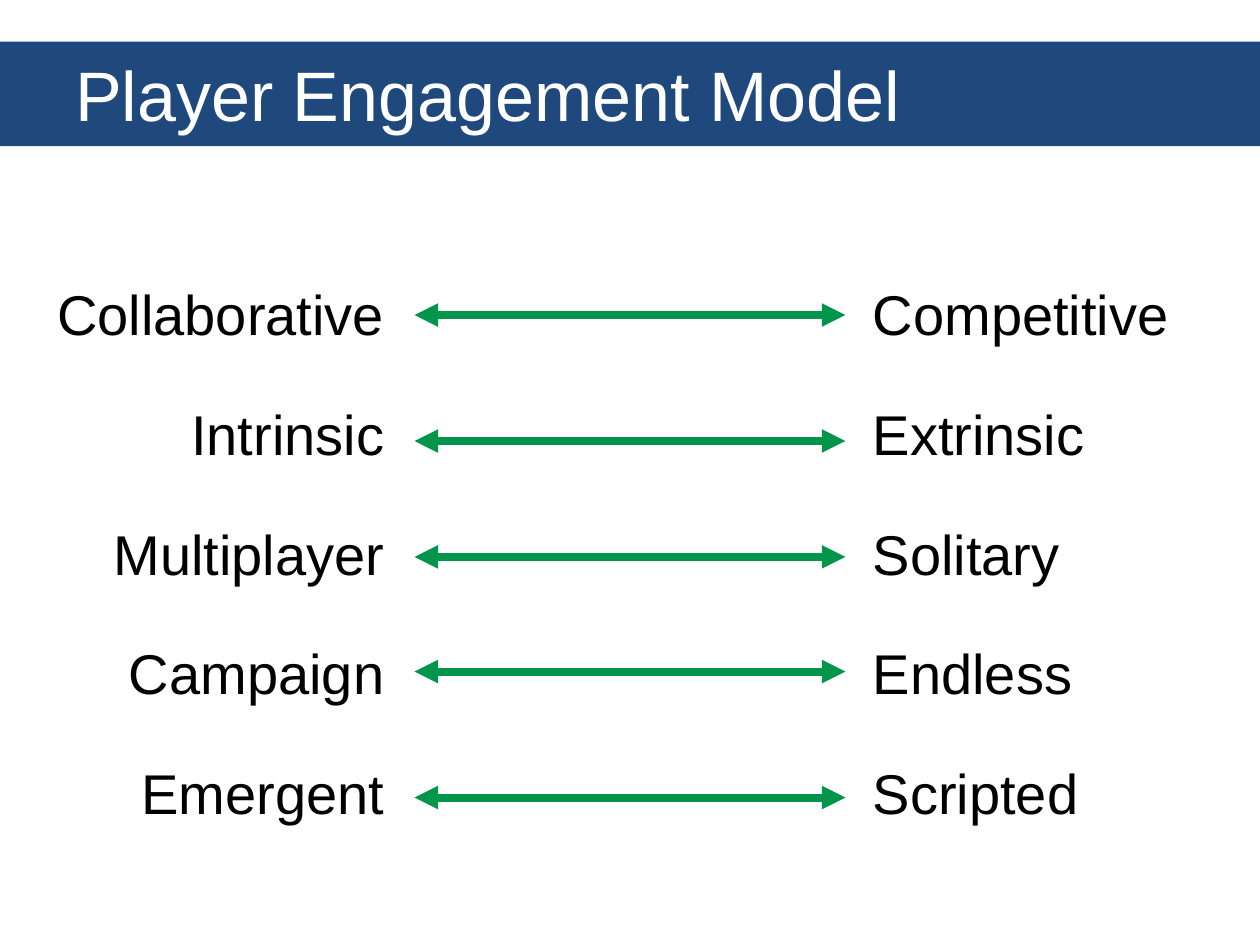
import pptx
import pptx.dml.color
import pptx.enum.shapes
import pptx.enum.text
import pptx.oxml.ns
import pptx.util
from lxml import etree
from pptx.util import Inches

NAVY = pptx.dml.color.RGBColor(0x1F, 0x49, 0x7D)
GREEN = pptx.dml.color.RGBColor(0x00, 0x95, 0x4A)
WHITE = pptx.dml.color.RGBColor(0xFF, 0xFF, 0xFF)
BLACK = pptx.dml.color.RGBColor(0x00, 0x00, 0x00)
FONT = "Arial"
ALIGN = pptx.enum.text.PP_ALIGN

OPPOSITES = [
    ("Collaborative", "Competitive"),
    ("Intrinsic", "Extrinsic"),
    ("Multiplayer", "Solitary"),
    ("Campaign", "Endless"),
    ("Emergent", "Scripted"),
]
ARROW_HEIGHTS = [2.5, 3.5, 4.42, 5.33, 6.33]


def add_span(para, text, size, color):
    span = para.add_run()
    span.text = text
    span.font.name = FONT
    span.font.size = pptx.util.Pt(size)
    span.font.color.rgb = color


def add_title_band(page, left, top, width, height):
    band = page.shapes.add_shape(
        pptx.enum.shapes.MSO_SHAPE.RECTANGLE, left, top, width, height)
    band.shadow.inherit = False
    band.fill.solid()
    band.fill.fore_color.rgb = NAVY
    band.line.fill.background()
    band.text_frame.vertical_anchor = pptx.enum.text.MSO_ANCHOR.MIDDLE
    para = band.text_frame.paragraphs[0]
    para.alignment = ALIGN.LEFT
    # Indent the title from the band's left edge
    properties = para._p.get_or_add_pPr()
    properties.set("marL", str(Inches(0.5)))
    properties.set("indent", "0")
    add_span(para, "Player Engagement Model", 40, WHITE)


def add_word_column(page, left, top, width, height, words, alignment):
    box = page.shapes.add_textbox(left, top, width, height)
    frame = box.text_frame
    frame.word_wrap = False
    frame.auto_size = pptx.enum.text.MSO_AUTO_SIZE.SHAPE_TO_FIT_TEXT
    for index, word in enumerate(words):
        para = frame.add_paragraph() if index else frame.paragraphs[0]
        para.alignment = alignment
        para.space_after = pptx.util.Pt(30)
        add_span(para, word, 32, BLACK)


def add_double_arrow(page, left, right, height):
    arrow = page.shapes.add_connector(
        pptx.enum.shapes.MSO_CONNECTOR.STRAIGHT, left, height, right, height)
    arrow.line.color.rgb = GREEN
    arrow.line.width = pptx.util.Pt(4.5)
    # Arrowheads at both ends, no shadow
    outline = arrow.line._get_or_add_ln()
    for end in ("a:headEnd", "a:tailEnd"):
        etree.SubElement(outline, pptx.oxml.ns.qn(end), type="triangle")
    etree.SubElement(arrow._element.spPr, pptx.oxml.ns.qn("a:effectLst"))


def add_opposites(page, left, top, width, height):
    left_words, right_words = zip(*OPPOSITES)
    left_width, right_width = Inches(2.82), Inches(2.57)
    right_start = left + width - right_width
    add_word_column(page, left, top, left_width, height, left_words, ALIGN.RIGHT)
    add_word_column(page, right_start, top, right_width, height,
                    right_words, ALIGN.LEFT)
    # Arrows fill the gap between the columns
    for arrow_height in ARROW_HEIGHTS:
        add_double_arrow(page, left + left_width + Inches(0.14),
                         right_start - Inches(0.12), Inches(arrow_height))


def main():
    deck = pptx.Presentation()
    deck.slide_width, deck.slide_height = Inches(10), Inches(7.5)
    page = deck.slides.add_slide(deck.slide_layouts[6])
    add_title_band(page, 0, Inches(0.33), deck.slide_width, Inches(0.83))
    add_opposites(page, Inches(0.33), Inches(2.17), Inches(9.07), Inches(4.48))
    deck.save("out.pptx")


if __name__ == "__main__":
    main()
